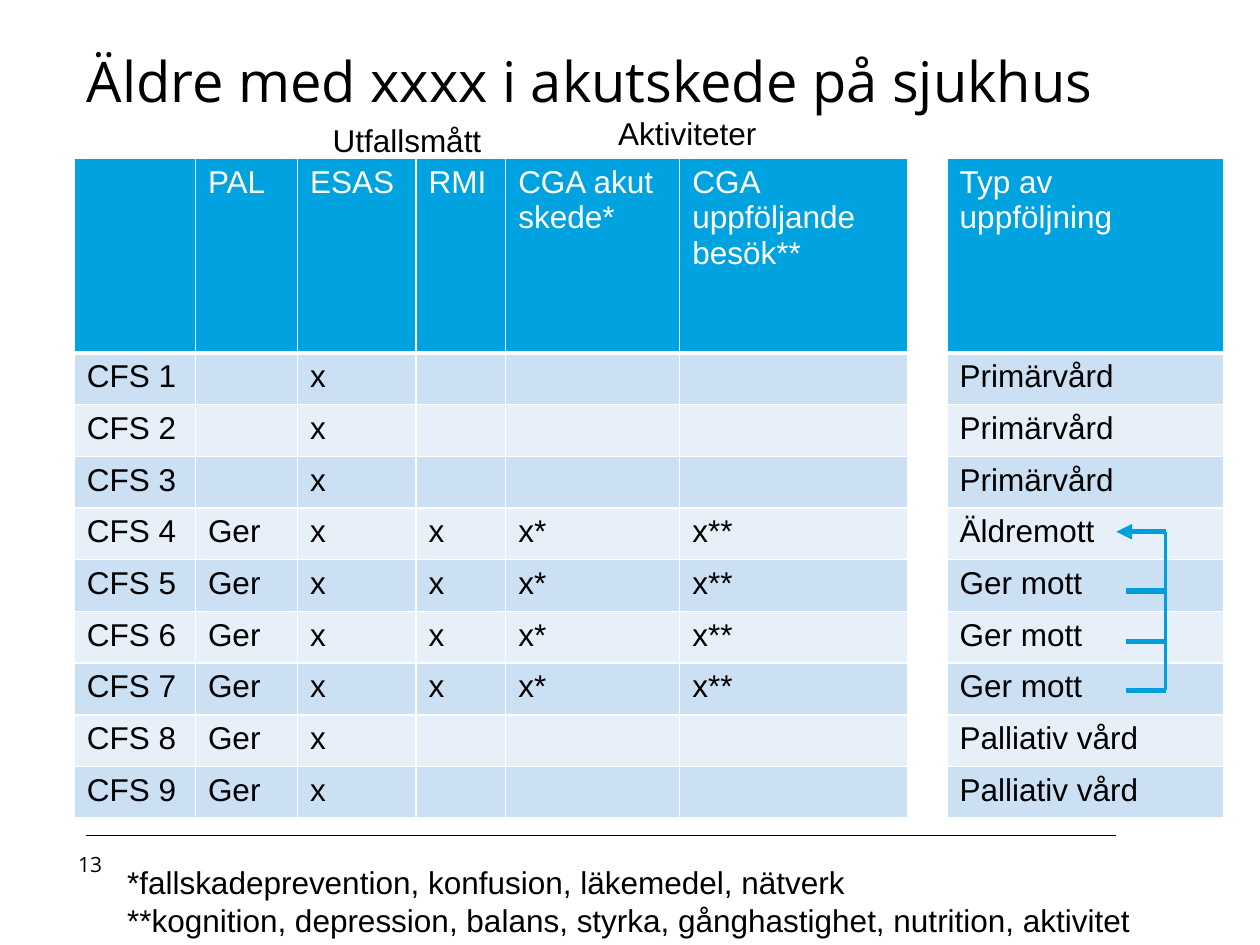
from dataclasses import dataclass

from lxml.etree import SubElement
from pptx import Presentation
from pptx.dml.color import RGBColor
from pptx.enum.shapes import MSO_CONNECTOR
from pptx.enum.text import MSO_ANCHOR, PP_ALIGN
from pptx.oxml import parse_xml
from pptx.oxml.ns import nsdecls, qn
from pptx.util import Inches, Pt


@dataclass(frozen=True)
class Theme:
    heading_font: str = "Open Sans"
    body_font: str = "Arial"
    title_size: int = 32
    body_size: int = 18
    number_size: int = 12
    black: str = "000000"
    white: str = "FFFFFF"
    header: str = "00A3E0"
    bands: tuple = ("E7F0F9", "CCE0F3")
    arrow: str = "009FDB"


@dataclass(frozen=True)
class Box:
    left: float
    top: float
    width: float
    height: float

    def share(self, left, top, width, height):
        return Box(
            *self.point(left, top),
            self.width * width / 100,
            self.height * height / 100,
        )

    def point(self, across, down):
        return (
            self.left + self.width * across / 100,
            self.top + self.height * down / 100,
        )

    def lengths(self):
        return [Inches(value) for value in (self.left, self.top, self.width, self.height)]


THEME = Theme()
COLUMN_WIDTHS = [0.96, 0.81, 0.94, 0.71, 1.38, 1.81, 0.31, 2.19]
GAP_COLUMN = 6
HEADER_HEIGHT, ROW_HEIGHT = 1.54, 0.41
HEADINGS = ["", "PAL", "ESAS", "RMI", "CGA akut skede*", "CGA uppföljande besök**",
            "", "Typ av uppföljning"]
FOLLOW_UPS = ["Primärvård"] * 3 + ["Äldremott"] + ["Ger mott"] * 3 + ["Palliativ vård"] * 2


def care_row(level, follow_up):
    doctor = "Ger" if level >= 4 else ""
    measures = ["x", "x*", "x**"] if 4 <= level <= 7 else [""] * 3
    return [f"CFS {level}", doctor, "x", *measures, "", follow_up]


def format_text(text_frame, font, size, color, alignment=PP_ALIGN.LEFT):
    for paragraph in text_frame.paragraphs:
        paragraph.alignment = alignment
        paragraph.font.size = Pt(size)
        for run in paragraph.runs:
            run.font.name = font
            run.font.size = Pt(size)
            run.font.bold = False
            run.font.color.rgb = RGBColor.from_string(color)


def add_text(slide, box, text, font=THEME.body_font, size=THEME.body_size,
             alignment=PP_ALIGN.LEFT, anchor=MSO_ANCHOR.TOP):
    text_frame = slide.shapes.add_textbox(*box.lengths()).text_frame
    text_frame.word_wrap = True
    text_frame.vertical_anchor = anchor
    text_frame.text = text
    format_text(text_frame, font, size, THEME.black, alignment)


def add_line(slide, start, end, color, width, arrowhead=False):
    ends = [Inches(value) for value in (*start, *end)]
    connector = slide.shapes.add_connector(MSO_CONNECTOR.STRAIGHT, *ends)
    connector.line.color.rgb = RGBColor.from_string(color)
    connector.line.width = Pt(width)
    properties = connector._element.spPr
    if arrowhead:
        SubElement(properties.find(qn("a:ln")), qn("a:tailEnd"), type="triangle")
    SubElement(properties, qn("a:effectLst"))


def set_borders(cell, bottom_width):
    properties = cell._tc.get_or_add_tcPr()
    widths = {"lnL": 1, "lnR": 1, "lnT": 1, "lnB": bottom_width}
    for position, (edge, width) in enumerate(widths.items()):
        properties.insert(position, parse_xml(
            f'<a:{edge} {nsdecls("a")} w="{Pt(width)}"><a:solidFill>'
            f'<a:srgbClr val="{THEME.white}"/></a:solidFill></a:{edge}>'
        ))


def place_heading(slide, box):
    add_text(slide, box.share(0, 0, 100, 96), "Äldre med xxxx i akutskede på sjukhus",
             THEME.heading_font, THEME.title_size, anchor=MSO_ANCHOR.MIDDLE)
    add_text(slide, box.share(21.43, 69.23, 17, 30.77), "Utfallsmått",
             alignment=PP_ALIGN.CENTER)
    add_text(slide, box.share(38.66, 65.4, 33, 30.77), "Aktiviteter",
             alignment=PP_ALIGN.CENTER)


def place_care_table(slide, box):
    rows = [HEADINGS] + [care_row(level, follow_up)
                         for level, follow_up in enumerate(FOLLOW_UPS, 1)]
    table = slide.shapes.add_table(len(rows), len(COLUMN_WIDTHS), *box.lengths()).table
    for column, width in zip(table.columns, COLUMN_WIDTHS):
        column.width = Inches(box.width * width / sum(COLUMN_WIDTHS))
    row_heights = [HEADER_HEIGHT] + [ROW_HEIGHT] * len(FOLLOW_UPS)
    for row_index, (texts, height) in enumerate(zip(rows, row_heights)):
        table.rows[row_index].height = Inches(box.height * height / sum(row_heights))
        is_header = row_index == 0
        row_fill = THEME.header if is_header else THEME.bands[row_index % 2]
        for column_index, text in enumerate(texts):
            cell = table.cell(row_index, column_index)
            cell.text = text
            format_text(cell.text_frame, THEME.body_font, THEME.body_size,
                        THEME.white if is_header else THEME.black)
            cell.fill.solid()
            cell.fill.fore_color.rgb = RGBColor.from_string(
                THEME.white if column_index == GAP_COLUMN else row_fill)
            set_borders(cell, 3 if is_header else 1)


def place_referral_arrow(slide, box):
    add_line(slide, box.point(100, 100), box.point(100, 0), THEME.arrow, 2.25)
    add_line(slide, box.point(100, 0), box.point(0, 0), THEME.arrow, 3, arrowhead=True)
    for down in (100, 69, 37.3):
        add_line(slide, box.point(20, down), box.point(100, down), THEME.arrow, 3)


def place_footer(slide, box):
    add_line(slide, box.point(2.77, 0), box.point(97.23, 0), THEME.black, 0.75)
    add_text(slide, box.share(0, 3.45, 6.35, 44.8), "13", THEME.heading_font,
             THEME.number_size, PP_ALIGN.CENTER, MSO_ANCHOR.MIDDLE)
    add_text(slide, box.share(5.43, 19.5, 94.57, 80.5),
             "*fallskadeprevention, konfusion, läkemedel, nätverk\n"
             "**kognition, depression, balans, styrka, gånghastighet, nutrition, aktivitet")


def main():
    presentation = Presentation()
    page = Box(0, 0, 10, 7.5)
    presentation.slide_width = Inches(page.width)
    presentation.slide_height = Inches(page.height)
    slide = presentation.slides.add_slide(presentation.slide_layouts[6])
    place_care_table(slide, page.share(5.9, 16.8, 91.2, 69.8))
    place_heading(slide, page.share(5.9, 0.13, 88.2, 17.33))
    place_footer(slide, page.share(4.4, 88.4, 86.6, 11.6))
    place_referral_arrow(slide, page.share(88.6, 56.27, 3.9, 16.8))
    presentation.save("out.pptx")


if __name__ == "__main__":
    main()
